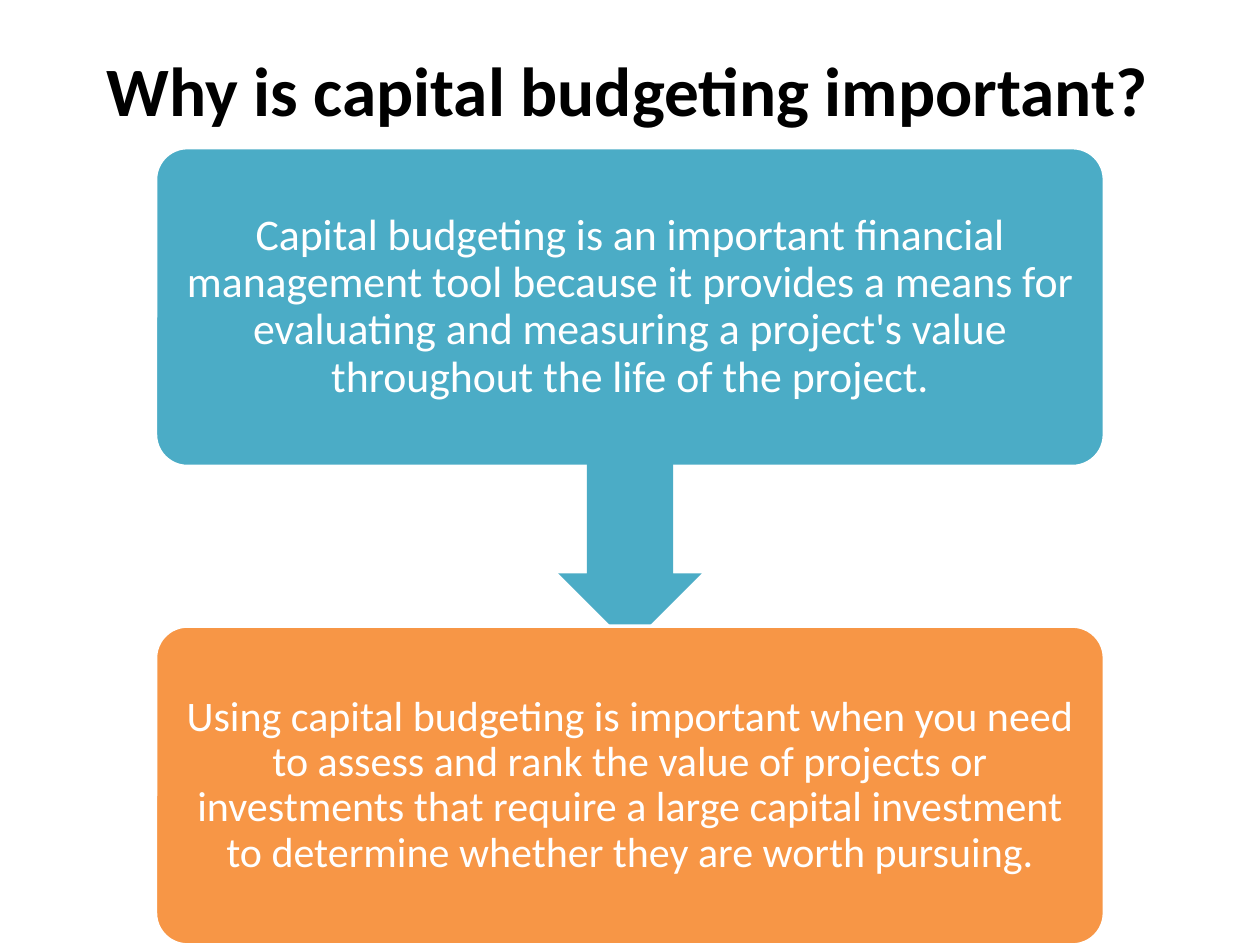
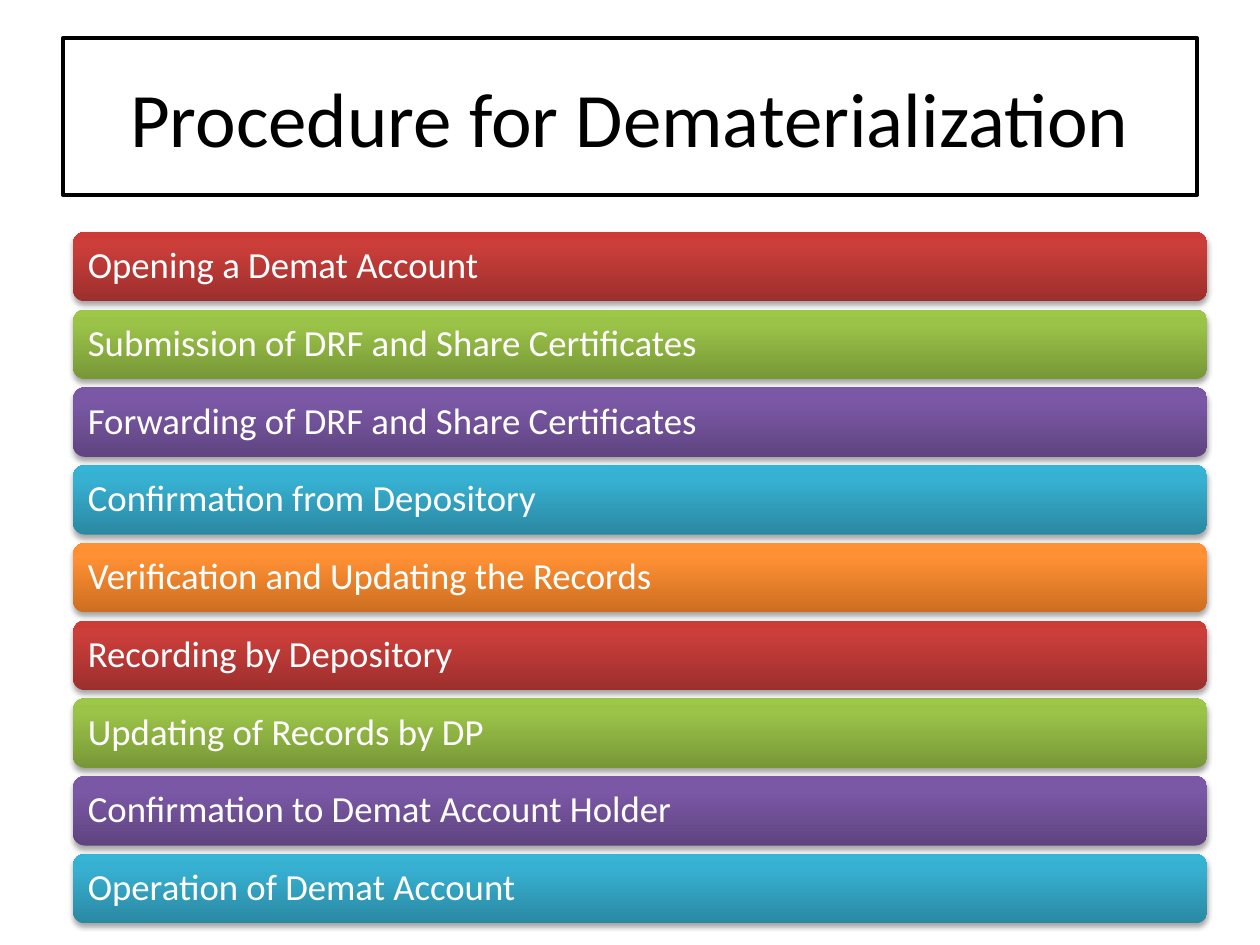
from copy import deepcopy
from itertools import cycle

from lxml import etree
from pptx import Presentation
from pptx.dml.color import RGBColor
from pptx.enum import shapes, text
from pptx.oxml.ns import qn
from pptx.util import Pt

# Shared colours and styles
BLACK = RGBColor(0x00, 0x00, 0x00)
WHITE = RGBColor(0xFF, 0xFF, 0xFF)
TEAL = RGBColor(0x4B, 0xAC, 0xC6)
ORANGE = RGBColor(0xF7, 0x96, 0x46)
BAR_GRADIENTS = [[RGBColor.from_string(c) for c in stops.split()] for stops in (
    "9C2F2D CB3E3A CE3B37",
    "779737 9BC348 9DC746",
    "5F4480 7B58A6 7C57A8",
    "2A88A2 37B1D2 34B4D6",
    "CC6E20 FF9034 FF9136",
)]
STOP_POSITIONS = (0, 0.8, 1)
FONT = "Calibri"

REASONS = [
    ("Capital budgeting is an important financial management tool because it "
     "provides a means for evaluating and measuring a project's value "
     "throughout the life of the project.", 25, TEAL),
    ("Using capital budgeting is important when you need to assess and rank "
     "the value of projects or investments that require a large capital "
     "investment to determine whether they are worth pursuing.", 24, ORANGE),
]
STEPS = [
    "Opening a Demat Account",
    "Submission of DRF and Share Certificates",
    "Forwarding of DRF and Share Certificates",
    "Confirmation from Depository",
    "Verification and Updating the Records",
    "Recording by Depository",
    "Updating of Records by DP",
    "Confirmation to Demat Account Holder",
    "Operation of Demat Account",
]


def set_all(obj, values):
    for name, value in values.items():
        setattr(obj, name, value)


def write(sp, words, size, color=WHITE, bold=False, inset=7.2,
          align=text.PP_ALIGN.CENTER, spacing=0.9):
    tf = sp.text_frame
    margin = Pt(inset)
    set_all(tf, {"word_wrap": True, "auto_size": text.MSO_AUTO_SIZE.NONE,
                 "vertical_anchor": text.MSO_ANCHOR.MIDDLE,
                 "margin_left": margin, "margin_right": margin,
                 "margin_top": margin, "margin_bottom": margin})
    p = tf.paragraphs[0]
    set_all(p, {"alignment": align, "line_spacing": spacing})
    r = p.add_run()
    r.text = words
    set_all(r.font, {"name": FONT, "size": Pt(size), "bold": bold})
    r.font.color.rgb = color


def add_titled_slide(prs, words, box, size, bold=False):
    s = prs.slides.add_slide(prs.slide_layouts[5])
    sp = s.shapes.title
    set_all(sp, dict(zip(("left", "top", "width", "height"), map(Pt, box))))
    write(sp, words, size, BLACK, bold, spacing=1.0)
    return s


def add_plain_shape(s, kind, box, adjustments=()):
    sp = s.shapes.add_shape(kind, *map(Pt, box))
    sp.shadow.inherit = False
    sp.line.fill.background()
    for i, value in enumerate(adjustments):
        sp.adjustments[i] = value
    return sp


def add_reason_flow(s, box):
    """Two cards at the ends of the box, with an arrow down between them."""
    left, top, width, height = box
    card_h = 182.2
    arrow_len, arrow_w = 113, 82

    def add_card(card_top, words, size, color):
        sp = add_plain_shape(s, shapes.MSO_SHAPE.ROUNDED_RECTANGLE,
                             (left, card_top, width, card_h), [0.1])
        sp.fill.solid()
        sp.fill.fore_color.rgb = color
        sp.line.color.rgb = WHITE
        sp.line.width = Pt(2)
        write(sp, words, size)

    add_card(top, *REASONS[0])
    arrow = add_plain_shape(
        s, shapes.MSO_SHAPE.RIGHT_ARROW,
        (left + (width - arrow_len) / 2, top + (height - arrow_w) / 2,
         arrow_len, arrow_w), [0.6, 0.5])
    arrow.rotation = 90
    arrow.fill.solid()
    arrow.fill.fore_color.rgb = TEAL
    add_card(top + height - card_h, *REASONS[1])


def fill_gradient(sp, colors):
    sp.fill.gradient()
    stop_list = sp._element.spPr.find(".//" + qn("a:gsLst"))
    stop_list.append(deepcopy(stop_list[-1]))
    for stop, position, color in zip(sp.fill.gradient_stops, STOP_POSITIONS, colors):
        stop.position = position
        stop.color.rgb = color
    sp.fill.gradient_angle = 90


def add_soft_shadow(sp):
    effects = sp._element.spPr.find(qn("a:effectLst"))
    shadow = etree.SubElement(effects, qn("a:outerShdw"), blurRad=str(Pt(3.1)),
                              dist=str(Pt(1.8)), dir="5400000", rotWithShape="0")
    color = etree.SubElement(shadow, qn("a:srgbClr"), val=str(BLACK))
    etree.SubElement(color, qn("a:alpha"), val="35000")


def add_step_bars(s, box):
    """Equal bars stacked down the box, cycling through the gradients."""
    left, top, width, height = box
    bar_h = 39.6
    pitch = (height - bar_h) / (len(STEPS) - 1)
    for i, (step, colors) in enumerate(zip(STEPS, cycle(BAR_GRADIENTS))):
        sp = add_plain_shape(s, shapes.MSO_SHAPE.ROUNDED_RECTANGLE,
                             (left, top + i * pitch, width, bar_h))
        fill_gradient(sp, colors)
        add_soft_shadow(sp)
        write(sp, step, 21, inset=6.5, align=text.PP_ALIGN.LEFT)


def build_importance_slide(prs):
    s = add_titled_slide(prs, "Why is capital budgeting important?",
                         (34.5, 18, 648, 66), 39.6, bold=True)
    add_reason_flow(s, (88.9, 84.4, 542.2, 455.6))


def build_procedure_slide(prs):
    s = add_titled_slide(prs, "Procedure for Dematerialization",
                         (36, 21.6, 648, 90), 44)
    title = s.shapes.title
    title.fill.solid()
    title.fill.fore_color.rgb = WHITE
    title.line.color.rgb = BLACK
    title.line.width = Pt(2)
    add_step_bars(s, (41.8, 132.6, 648, 395))


def main():
    prs = Presentation()
    set_all(prs, {"slide_width": Pt(720), "slide_height": Pt(540)})
    build_importance_slide(prs)
    build_procedure_slide(prs)
    prs.save("out.pptx")


if __name__ == "__main__":
    main()
